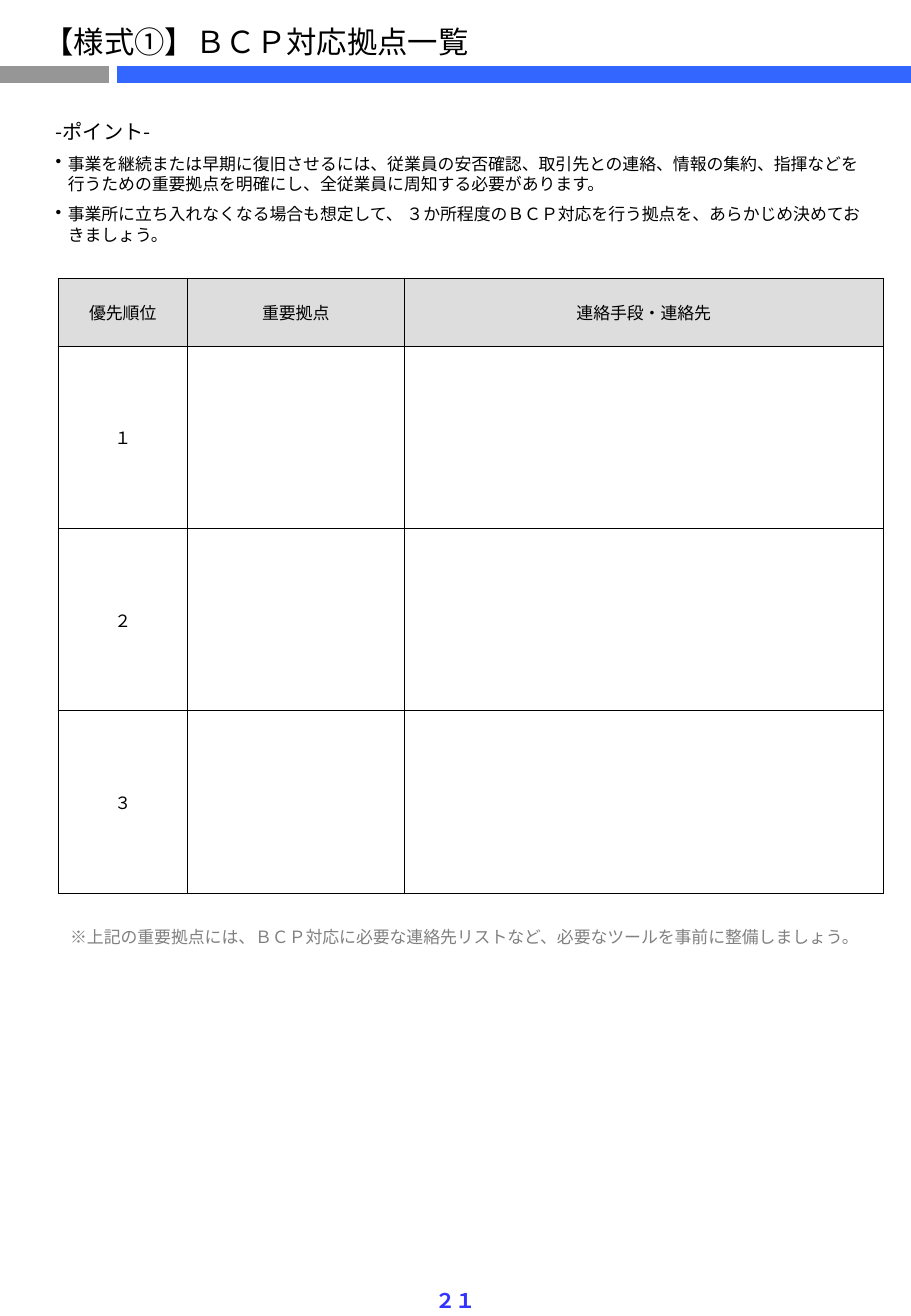
"""Builds the BCP site list form: title bar, key points, site table, note and page number."""
import lxml.etree
import pptx
import pptx.dml.color
import pptx.enum.lang
import pptx.enum.shapes
import pptx.enum.text
import pptx.oxml.ns
import pptx.util

Inches = pptx.util.Inches
Pt = pptx.util.Pt
qn = pptx.oxml.ns.qn
rgb = pptx.dml.color.RGBColor.from_string
FONT = "Noto Sans CJK JP"
CENTER = pptx.enum.text.PP_ALIGN.CENTER


def format_paragraph(paragraph, size, color="000000", bold=False):
    """Applies one font to every run of a paragraph."""
    for run in paragraph.runs:
        run.font.size = Pt(size)
        run.font.bold = bold
        run.font.color.rgb = rgb(color)
        run.font.name = FONT
        run.font.language_id = pptx.enum.lang.MSO_LANGUAGE_ID.JAPANESE
        lxml.etree.SubElement(run.font._element, qn("a:ea"), typeface=FONT)


def add_text(left, top, width, height, text, wrap=True):
    """Adds a text box and returns its text frame."""
    box = slide.shapes.add_textbox(Inches(left), Inches(top), Inches(width), Inches(height))
    frame = box.text_frame
    frame.word_wrap = wrap
    frame.auto_size = pptx.enum.text.MSO_AUTO_SIZE.SHAPE_TO_FIT_TEXT
    frame.text = text
    return frame


presentation = pptx.Presentation()
presentation.slide_width = Inches(7.5)
presentation.slide_height = Inches(10.83)
slide = presentation.slides.add_slide(presentation.slide_layouts[6])

for start, end, color in [(0, 0.9, "969696"), (0.96, 7.5, "3366FF")]:
    bar = slide.shapes.add_connector(
        pptx.enum.shapes.MSO_CONNECTOR.STRAIGHT,
        Inches(start), Inches(0.61), Inches(end), Inches(0.61))
    bar.line.width = Pt(10)
    bar.line.color.rgb = rgb(color)
    lxml.etree.SubElement(bar._element.spPr, qn("a:effectLst"))

title = add_text(0.26, 0.14, 3.74, 0.4, "【様式①】ＢＣＰ対応拠点一覧", wrap=False)
format_paragraph(title.paragraphs[0], 18)

points = add_text(0.36, 0.93, 6.89, 1.14, "\n".join([
    "-ポイント-",
    "事業を継続または早期に復旧させるには、従業員の安否確認、取引先との連絡、情報の集約、指揮などを"
    "行うための重要拠点を明確にし、全従業員に周知する必要があります。",
    "事業所に立ち入れなくなる場合も想定して、 ３か所程度のＢＣＰ対応を行う拠点を、"
    "あらかじめ決めておきましょう。",
]))
for index, paragraph in enumerate(points.paragraphs):
    format_paragraph(paragraph, 10 if index else 12)
    paragraph.space_after = Pt(6)
    properties = paragraph._p.get_or_add_pPr()
    properties.set("marL", str(Inches(0.1)))
    properties.set("indent", str(Inches(-0.1)))
    if index:
        lxml.etree.SubElement(properties, qn("a:buChar"), char="•")

note = add_text(
    0.48, 7.58, 6.77, 0.27,
    "※上記の重要拠点には、ＢＣＰ対応に必要な連絡先リストなど、必要なツールを事前に整備しましょう。")
format_paragraph(note.paragraphs[0], 10, "808080")

site_rows = [
    ["優先順位", "重要拠点", "連絡手段・連絡先"],
    ["１", "", ""],
    ["２", "", ""],
    ["３", "", ""],
]
table = slide.shapes.add_table(
    4, 3, Inches(0.48), Inches(2.29), Inches(6.79), Inches(5.06)).table
table.first_row = False
table.horz_banding = False
for column, width in zip(table.columns, [1.06, 1.79, 3.94]):
    column.width = Inches(width)
for row_index, texts in enumerate(site_rows):
    table.rows[row_index].height = Inches(1.5 if row_index else 0.56)
    for column_index, text in enumerate(texts):
        cell = table.cell(row_index, column_index)
        cell.vertical_anchor = pptx.enum.text.MSO_ANCHOR.MIDDLE
        cell_properties = cell._tc.get_or_add_tcPr()
        for side in ["lnL", "lnR", "lnT", "lnB"]:
            border = lxml.etree.SubElement(cell_properties, qn("a:" + side), w=str(Pt(0.5)))
            border_fill = lxml.etree.SubElement(border, qn("a:solidFill"))
            lxml.etree.SubElement(border_fill, qn("a:srgbClr"), val="000000")
        if row_index:
            cell.fill.background()
        else:
            cell.fill.solid()
            cell.fill.fore_color.rgb = rgb("DDDDDD")
        if text:
            cell.text_frame.text = text
            paragraph = cell.text_frame.paragraphs[0]
            paragraph.alignment = CENTER
            paragraph.space_before = Pt(2)
            format_paragraph(paragraph, 10)

page_number = add_text(3.48, 10.55, 0.54, 0.31, "２１", wrap=False)
page_number.paragraphs[0].alignment = CENTER
format_paragraph(page_number.paragraphs[0], 12, "3333FF", bold=True)

presentation.save("out.pptx")
